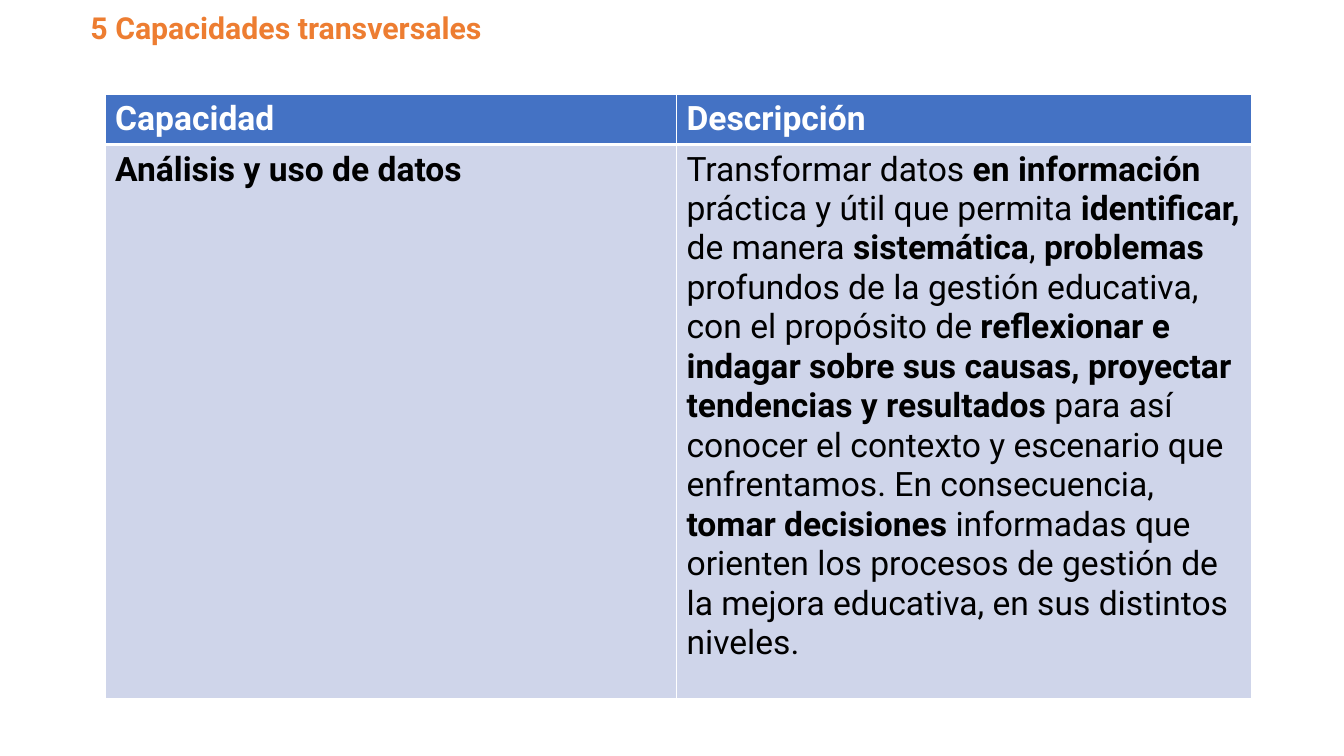
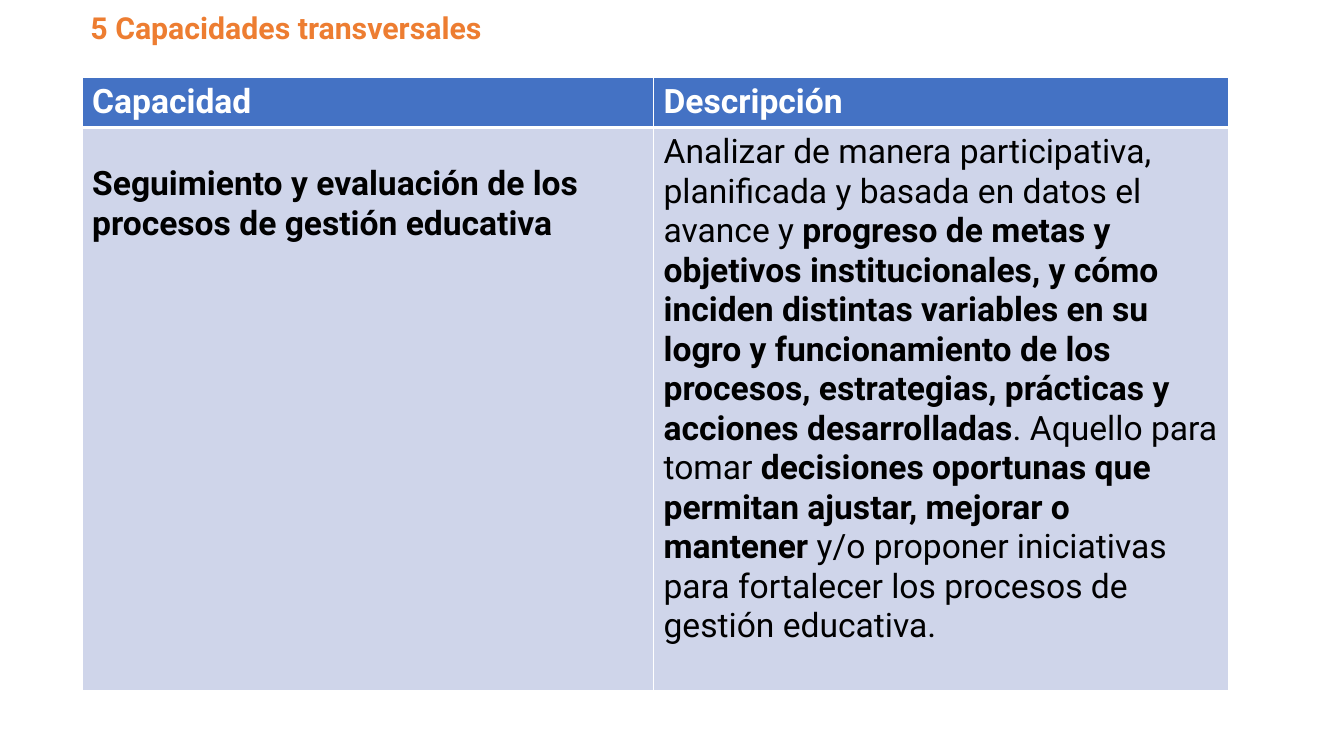
from dataclasses import dataclass

from lxml.etree import SubElement
from pptx import Presentation
from pptx.dml.color import RGBColor as RGB
from pptx.enum.text import MSO_ANCHOR as ANCHOR
from pptx.oxml.ns import qn
from pptx.util import Cm, Pt

TITLE = "5 Capacidades transversales"
HEADERS = ("Capacidad", "Descripción")

CAPACITIES = [
    {
        "name": "Análisis y uso de datos",
        "description": [
            ("Transformar datos ", False),
            ("en información ", True),
            ("práctica y útil que permita ", False),
            ("identificar,", True),
            (" de manera ", False),
            ("sistemática", True),
            (", ", False),
            ("problemas", True),
            (" profundos de la gestión educativa, con el propósito de ", False),
            ("reflexionar e indagar sobre sus causas, proyectar tendencias y resultados ", True),
            ("para así conocer el contexto y escenario que enfrentamos. En consecuencia, ", False),
            ("tomar decisiones ", True),
            ("informadas que orienten los procesos de gestión de la mejora educativa, "
             "en sus distintos niveles.", False),
        ],
        "left": 2.65, "top": 2.37, "body_height": 13.95, "name_drop": 0,
    },
    {
        "name": "Seguimiento y evaluación de los procesos de gestión educativa",
        "description": [
            ("Analizar de manera participativa, planificada y basada en datos el avance y ", False),
            ("progreso de metas y objetivos institucionales, y cómo inciden distintas variables "
             "en su logro y funcionamiento de los procesos, estrategias, prácticas y acciones "
             "desarrolladas", True),
            (". Aquello para tomar ", False),
            ("decisiones oportunas que permitan ajustar, mejorar o mantener ", True),
            ("y/o proponer iniciativas para fortalecer los procesos de gestión educativa.", False),
        ],
        "left": 2.07, "top": 1.94, "body_height": 14.2, "name_drop": 0.8,
    },
]

COLUMNS = (14.4, 14.5)
HEADER_HEIGHT = 1.23
CELL_MARGIN = 0.13


@dataclass(frozen=True)
class Theme:
    font: str = "Roboto"
    title_size: float = 21.6
    table_size: float = 24
    title: str = "ED7D31"
    header: str = "4472C4"
    body: str = "CFD5EA"
    light: str = "FFFFFF"
    dark: str = "000000"
    thin: float = 1
    thick: float = 3


THEME = Theme()


def add_runs(p, runs, size, color):
    for text, bold in runs:
        r = p.add_run()
        r.text = text
        r.font.name = THEME.font
        r.font.size = Pt(size)
        r.font.bold = bold
        r.font.color.rgb = RGB.from_string(color)


def set_borders(cell, **widths):
    tc_pr = cell._tc.get_or_add_tcPr()
    for i, side in enumerate("LRTB"):
        ln = SubElement(tc_pr, qn(f"a:ln{side}"), w=str(Pt(widths.get(side, THEME.thin))))
        fill = SubElement(ln, qn("a:solidFill"))
        SubElement(fill, qn("a:srgbClr"), val=THEME.light)
        tc_pr.insert(i, ln)


def fill_cell(cell, runs, fill, color, drop=0, **widths):
    cell.fill.solid()
    cell.fill.fore_color.rgb = RGB.from_string(fill)
    cell.margin_top = Cm(CELL_MARGIN + drop)
    add_runs(cell.text_frame.paragraphs[0], runs, THEME.table_size, color)
    set_borders(cell, **widths)


def add_title(slide):
    tf = slide.shapes.add_textbox(Cm(2.03), Cm(0.2), Cm(29.2), Cm(1.1)).text_frame
    tf.word_wrap = True
    tf.vertical_anchor = ANCHOR.MIDDLE
    p = tf.paragraphs[0]
    p.line_spacing = 0.9
    add_runs(p, [(TITLE, True)], THEME.title_size, THEME.title)


def add_capacity_table(slide, item):
    heights = (HEADER_HEIGHT, item["body_height"])
    table = slide.shapes.add_table(
        len(heights), len(COLUMNS), Cm(item["left"]), Cm(item["top"]),
        Cm(sum(COLUMNS)), Cm(sum(heights))).table
    for row, height in zip(table.rows, heights):
        row.height = Cm(height)
    for column, width in zip(table.columns, COLUMNS):
        column.width = Cm(width)
    bodies = (([(item["name"], True)], item["name_drop"]), (item["description"], 0))
    for col, (header, (runs, drop)) in enumerate(zip(HEADERS, bodies)):
        fill_cell(table.cell(0, col), [(header, True)], THEME.header, THEME.light, B=THEME.thick)
        fill_cell(table.cell(1, col), runs, THEME.body, THEME.dark, drop, T=THEME.thick)


def main():
    prs = Presentation()
    prs.slide_width, prs.slide_height = Cm(33.87), Cm(19.05)
    for item in CAPACITIES:
        slide = prs.slides.add_slide(prs.slide_layouts[6])
        add_title(slide)
        add_capacity_table(slide, item)
    prs.save("out.pptx")


if __name__ == "__main__":
    main()
